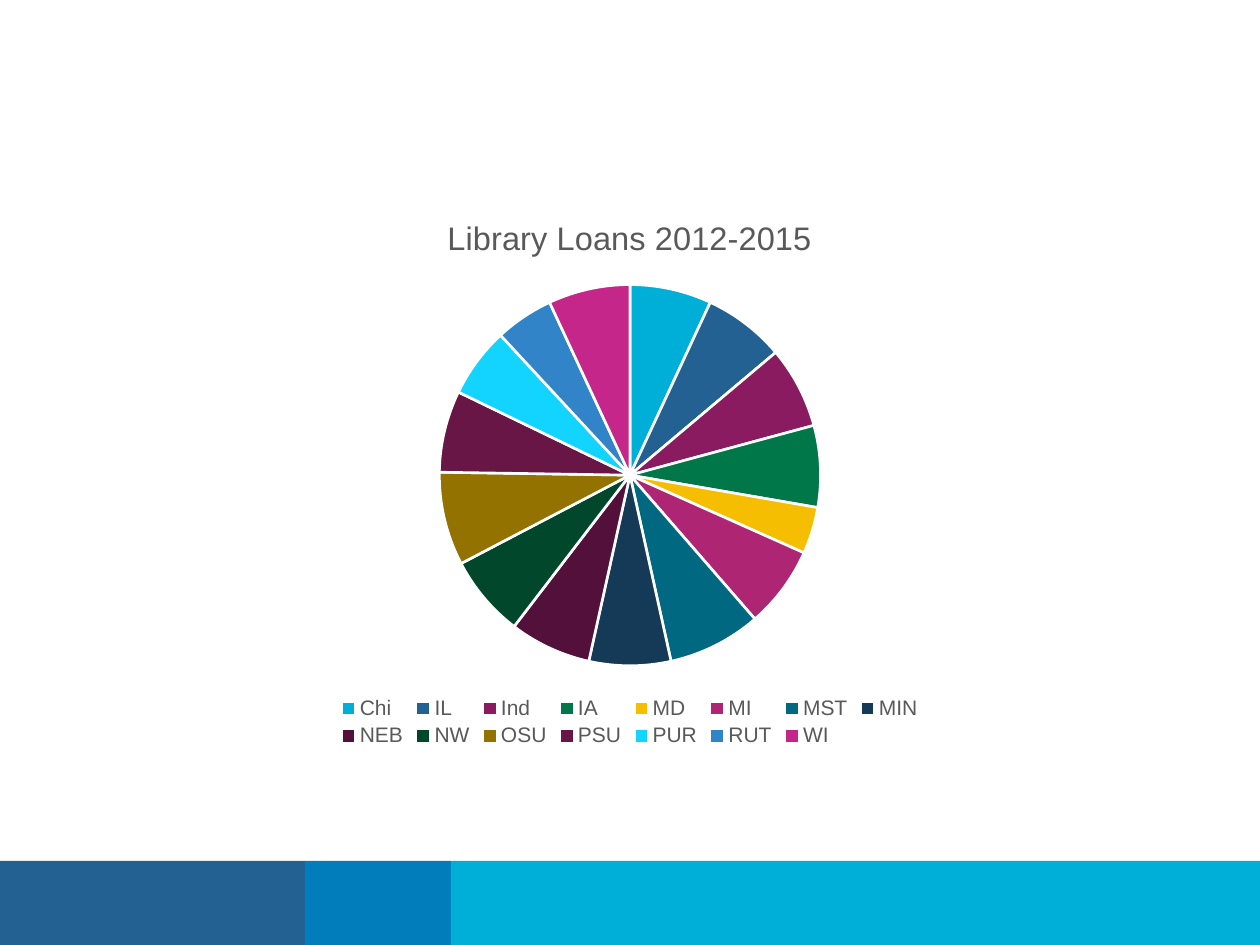
from dataclasses import dataclass
from typing import NamedTuple

from pptx import Presentation
from pptx.chart.data import CategoryChartData
from pptx.dml.color import RGBColor
from pptx.enum.chart import XL_CHART_TYPE as ChartType, XL_LEGEND_POSITION as LegendPosition
from pptx.enum.shapes import MSO_SHAPE as Shape
from pptx.util import Emu, Pt

EMU_PER_PX = 914400 // 126


@dataclass(frozen=True)
class Theme:
    font: str = "Arial"
    text: str = "595959"
    border: str = "FFFFFF"
    navy: str = "236192"
    blue: str = "007DBA"
    cyan: str = "00AFD7"
    title_size: float = 18.6
    legend_size: float = 12
    border_width: float = 1.5


class Box(NamedTuple):
    left: int
    top: int
    width: int
    height: int

    def emu(self) -> list[Emu]:
        return [Emu(length * EMU_PER_PX) for length in self]


class Band(NamedTuple):
    width: int
    color: str


class Slice(NamedTuple):
    library: str
    loans: int
    color: str


THEME = Theme()
SLIDE_WIDTH, SLIDE_HEIGHT = 1260, 945
FOOTER_TOP = 861
CHART_BOX = Box(210, 193, 840, 559)
CHART_TITLE = "Library Loans 2012-2015"
BANDS = [Band(305, THEME.navy), Band(146, THEME.blue), Band(809, THEME.cyan)]
SLICES = [
    Slice("Chi", 7, THEME.cyan),
    Slice("IL", 7, THEME.navy),
    Slice("Ind", 7, "8A1B61"),
    Slice("IA", 7, "007749"),
    Slice("MD", 4, "F6BE00"),
    Slice("MI", 7, "AE2573"),
    Slice("MST", 8, "006981"),
    Slice("MIN", 7, "153A58"),
    Slice("NEB", 7, "53103A"),
    Slice("NW", 7, "00472C"),
    Slice("OSU", 8, "947200"),
    Slice("PSU", 7, "681645"),
    Slice("PUR", 6, "13D3FF"),
    Slice("RUT", 5, "3084C7"),
    Slice("WI", 7, "C4268A"),
]


def format_font(font, size: float) -> None:
    values = {"name": THEME.font, "size": Pt(size), "bold": False}
    for name, value in values.items():
        setattr(font, name, value)
    font.color.rgb = RGBColor.from_string(THEME.text)


def paint(fill, color: str) -> None:
    fill.solid()
    fill.fore_color.rgb = RGBColor.from_string(color)


def draw_footer(slide, bands: list[Band]) -> None:
    left = 0
    for band in bands:
        box = Box(left, FOOTER_TOP, band.width, SLIDE_HEIGHT - FOOTER_TOP)
        shape = slide.shapes.add_shape(Shape.RECTANGLE, *box.emu())
        shape.shadow.inherit = False
        paint(shape.fill, band.color)
        shape.line.fill.background()
        left += band.width


def draw_pie(slide, slices: list[Slice]) -> None:
    data = CategoryChartData()
    data.categories = [item.library for item in slices]
    data.add_series(CHART_TITLE, [item.loans for item in slices])
    chart = slide.shapes.add_chart(ChartType.PIE, *CHART_BOX.emu(), data).chart
    format_font(chart.font, THEME.legend_size)

    chart.has_title = True
    title = chart.chart_title.text_frame
    title.text = CHART_TITLE
    format_font(title.paragraphs[0].runs[0].font, THEME.title_size)

    chart.has_legend = True
    legend = chart.legend
    for name, value in {"position": LegendPosition.BOTTOM, "include_in_layout": False}.items():
        setattr(legend, name, value)
    format_font(legend.font, THEME.legend_size)

    plot = chart.plots[0]
    plot.vary_by_categories = True
    for index, item in enumerate(slices):
        style = plot.series[0].points[index].format
        paint(style.fill, item.color)
        paint(style.line.fill, THEME.border)
        style.line.width = Pt(THEME.border_width)


def main() -> None:
    presentation = Presentation()
    presentation.slide_width = Emu(SLIDE_WIDTH * EMU_PER_PX)
    presentation.slide_height = Emu(SLIDE_HEIGHT * EMU_PER_PX)
    slide = presentation.slides.add_slide(presentation.slide_layouts[6])
    draw_footer(slide, BANDS)
    draw_pie(slide, SLICES)
    presentation.save("out.pptx")


if __name__ == "__main__":
    main()
